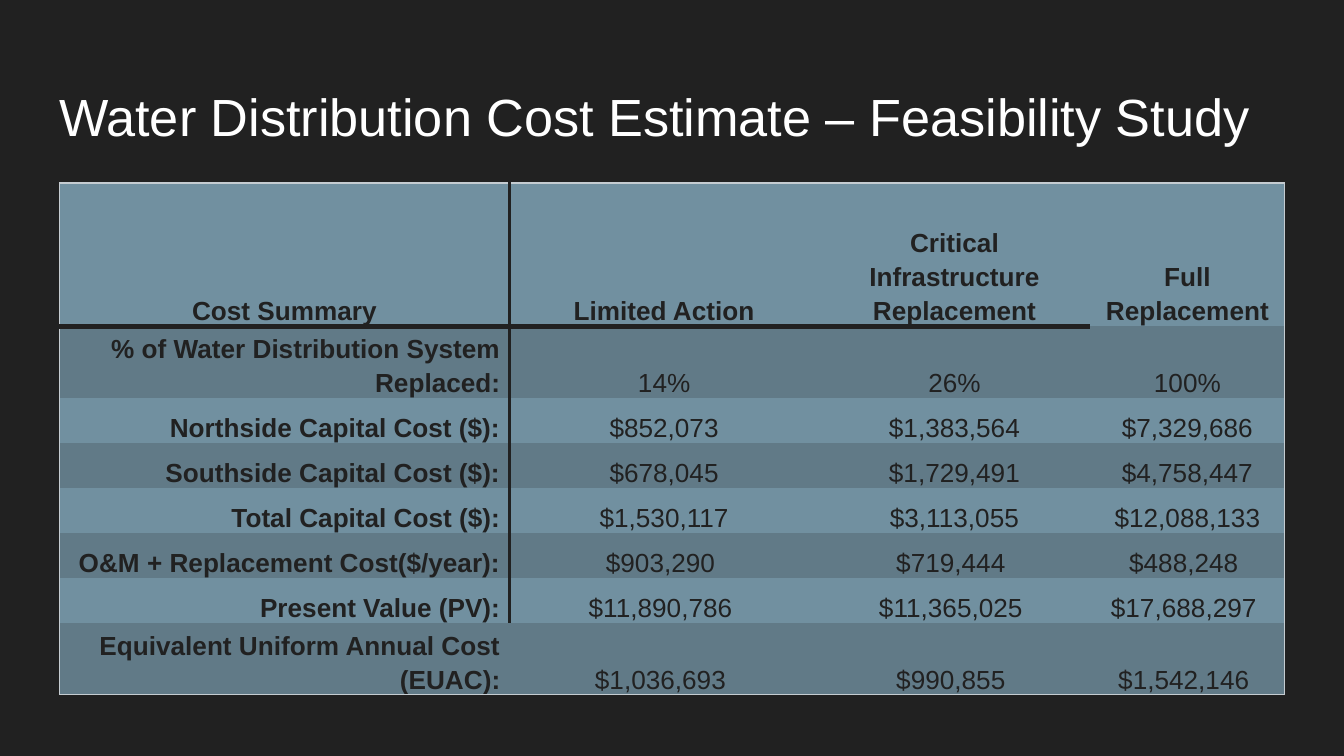
from dataclasses import dataclass

from lxml import etree
from pptx import Presentation
from pptx.dml.color import RGBColor
from pptx.enum import text
from pptx.oxml import ns
from pptx.util import Pt


@dataclass(frozen=True)
class Theme:
    font: str = "Arial"
    ink: str = "212121"
    title_ink: str = "FFFFFF"
    light_band: str = "7190A0"
    dark_band: str = "617A87"
    frame: str = "C5CCD1"
    title_size: float = 28
    table_size: float = 14
    frame_width: float = 0.75
    label_rule: float = 2
    header_rule: float = 3


COST_ROWS = [
    ("Cost Summary", "Limited Action", "Critical Infrastructure Replacement",
     "Full Replacement"),
    ("% of Water Distribution System Replaced:", "14%", "26%", "100%"),
    ("Northside Capital Cost ($):", "$852,073", "$1,383,564", "$7,329,686"),
    ("Southside Capital Cost ($):", "$678,045", "$1,729,491", "$4,758,447"),
    ("Total Capital Cost ($):", "$1,530,117", "$3,113,055", "$12,088,133"),
    ("O&M + Replacement Cost($/year):", "$903,290 ", "$719,444 ", "$488,248 "),
    ("Present Value (PV):", "$11,890,786 ", "$11,365,025 ", "$17,688,297 "),
    ("Equivalent Uniform Annual Cost (EUAC):", "$1,036,693 ", "$990,855 ",
     "$1,542,146 "),
]
COLUMN_WIDTHS = [241.2, 165.6, 145.5, 104.1]
ROW_HEIGHTS = [76.7, 38.5] + [24.1] * 5 + [38.5]


class SlideBuilder:
    def __init__(self, deck, theme):
        self.theme = theme
        self.slide = deck.slides.add_slide(deck.slide_layouts[5])
        background = self.slide.background.fill
        background.solid()
        background.fore_color.rgb = RGBColor.from_string(theme.ink)

    def format_text(self, paragraph, size, color, bold=False):
        for run in paragraph.runs:
            run.font.name = self.theme.font
            run.font.size = Pt(size)
            run.font.bold = bold
            run.font.color.rgb = RGBColor.from_string(color)

    def title(self, wording, left, top, width, height):
        heading = self.slide.shapes.title
        heading.left, heading.top = Pt(left), Pt(top)
        heading.width, heading.height = Pt(width), Pt(height)
        frame = heading.text_frame
        frame.text = wording
        frame.word_wrap = True
        frame.auto_size = text.MSO_AUTO_SIZE.NONE
        frame.vertical_anchor = text.MSO_ANCHOR.TOP
        frame.margin_left = frame.margin_right = frame.margin_bottom = Pt(7.2)
        frame.margin_top = Pt(10)
        frame.paragraphs[0].alignment = text.PP_ALIGN.LEFT
        self.format_text(frame.paragraphs[0], self.theme.title_size,
                         self.theme.title_ink)

    def cost_table(self, rows, left, top, widths, heights):
        table = self.slide.shapes.add_table(
            len(rows), len(widths), Pt(left), Pt(top),
            Pt(sum(widths)), Pt(sum(heights))).table
        table.horz_banding = False
        table.first_row = False
        for column, width in zip(table.columns, widths):
            column.width = Pt(width)
        for row, height in zip(table.rows, heights):
            row.height = Pt(height)
        for r, entries in enumerate(rows):
            for c, entry in enumerate(entries):
                cell = table.cell(r, c)
                self.borders(cell, self.edges(r, c, len(rows), len(widths)))
                self.cell(cell, entry, r, c)

    def cell(self, cell, entry, r, c):
        theme = self.theme
        cell.fill.solid()
        cell.fill.fore_color.rgb = RGBColor.from_string(
            theme.dark_band if r % 2 else theme.light_band)
        cell.margin_left = cell.margin_right = Pt(5)
        cell.margin_top = cell.margin_bottom = 0
        cell.vertical_anchor = text.MSO_ANCHOR.BOTTOM
        cell.text_frame.text = entry
        paragraph = cell.text_frame.paragraphs[0]
        is_row_label = c == 0 and r > 0
        paragraph.alignment = (text.PP_ALIGN.RIGHT if is_row_label
                               else text.PP_ALIGN.CENTER)
        paragraph.line_spacing = 1.15
        self.format_text(paragraph, theme.table_size, theme.ink,
                         bold=r == 0 or c == 0)

    def edges(self, r, c, row_count, column_count):
        """Map each visible side of a cell to its (color, width)."""
        theme = self.theme
        frame = (theme.frame, theme.frame_width)
        label_rule = (theme.ink, theme.label_rule)
        header_rule = (theme.ink, theme.header_rule)
        last_row, last_column = row_count - 1, column_count - 1
        sides = {}
        if c == 0:
            sides["L"] = frame
        if c == last_column:
            sides["R"] = frame
        if r == 0:
            sides["T"] = frame
        if r == last_row:
            sides["B"] = frame
        # The label rule stops above the last row,
        # the header rule before the last column.
        if r < last_row and c < 2:
            sides["R" if c == 0 else "L"] = label_rule
        if c < last_column and r < 2:
            sides["B" if r == 0 else "T"] = header_rule
        return sides

    def borders(self, cell, sides):
        properties = cell._tc.get_or_add_tcPr()
        for side in "LRTB":
            line = etree.SubElement(properties, ns.qn(f"a:ln{side}"))
            if side not in sides:
                etree.SubElement(line, ns.qn("a:noFill"))
                continue
            color, width = sides[side]
            line.set("w", str(Pt(width)))
            fill = etree.SubElement(line, ns.qn("a:solidFill"))
            etree.SubElement(fill, ns.qn("a:srgbClr"), val=color)


def main():
    deck = Presentation()
    deck.slide_width, deck.slide_height = Pt(720), Pt(405)
    builder = SlideBuilder(deck, Theme())
    builder.title("Water Distribution Cost Estimate – Feasibility Study",
                  24.5, 35, 671, 45.4)
    builder.cost_table(COST_ROWS, 31.8, 98, COLUMN_WIDTHS, ROW_HEIGHTS)
    deck.save("out.pptx")


if __name__ == "__main__":
    main()
